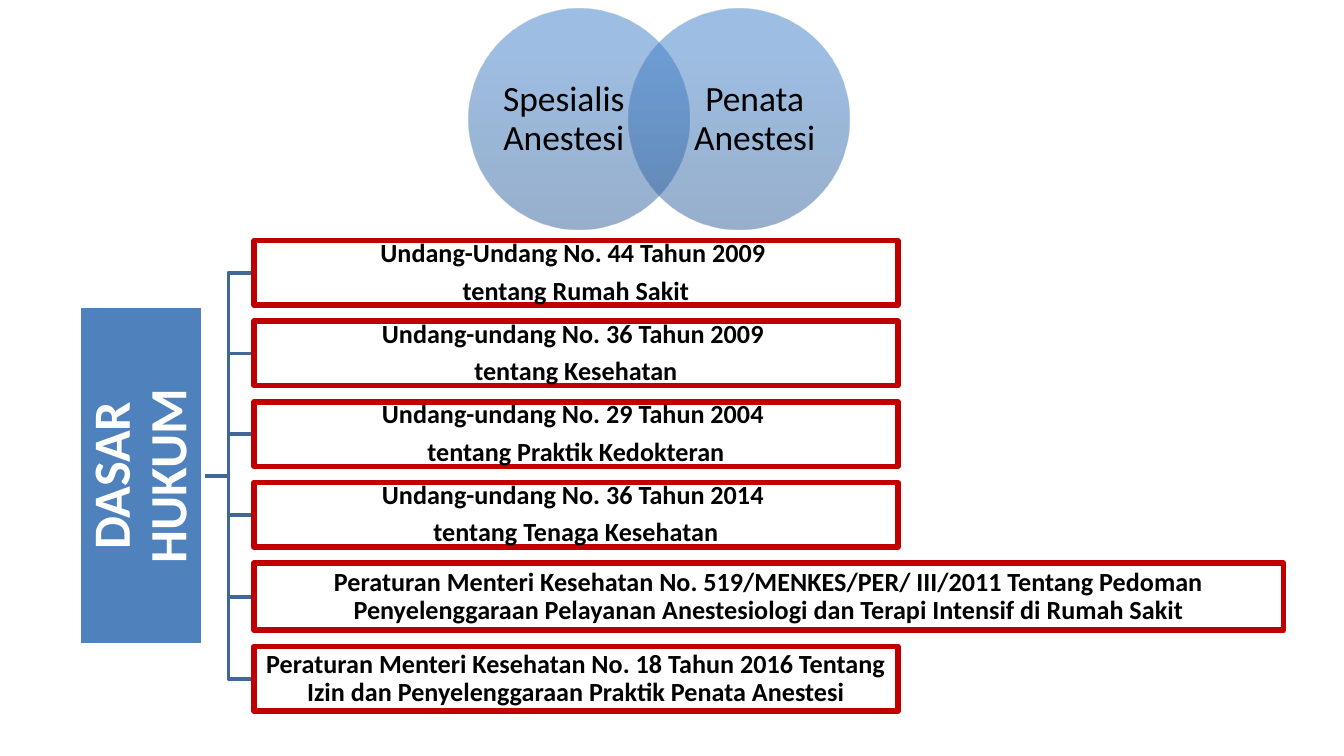
from dataclasses import dataclass

from lxml.etree import SubElement
from pptx import Presentation
from pptx.dml.color import RGBColor
from pptx.enum.shapes import MSO_SHAPE as Preset
from pptx.enum.text import MSO_ANCHOR as Anchor, PP_ALIGN as Align
from pptx.oxml.ns import qn
from pptx.util import Inches, Pt


@dataclass(frozen=True)
class Theme:
    font: str = "Calibri"
    white: str = "FFFFFF"
    black: str = "000000"
    heading: str = "4F81BD"
    branch: str = "3F6797"
    border: str = "C00000"
    gradient: tuple = ((0, "2F5F99"), (80, "3D7CC7"), (100, "3A7CCB"))
    opacity: int = 50
    heading_size: int = 28
    circle_size: int = 19
    law_size: int = 14


THEME = Theme()
COLUMNS, ROWS = 100, 56.25
CIRCLE_TOP, CIRCLE_SIZE = 0.65, 16.4
CIRCLES = [("Spesialis Anestesi", 34.9, 37.2), ("Penata Anestesi", 46.8, 51.4)]
HEADING_CENTER = (10.5, 35.4)
HEADING_LENGTH, HEADING_DEPTH = 25.2, 9.2
LAW_LEFT, LAW_TOP, LAW_GAP = 18.9, 17.9, 1.2
NARROW, WIDE = 47.9, 76.6
LAWS = [
    (["Undang-Undang No. 44 Tahun 2009 ", "tentang Rumah Sakit"], NARROW, 4.8),
    (["Undang-undang No. 36 Tahun 2009 ", "tentang Kesehatan"], NARROW, 4.8),
    (["Undang-undang No. 29 Tahun 2004 ", "tentang Praktik Kedokteran"], NARROW, 4.8),
    (["Undang-undang No. 36 Tahun 2014 ", "tentang Tenaga Kesehatan"], NARROW, 4.8),
    (["Peraturan Menteri Kesehatan No. 519/MENKES/PER/ III/2011 Tentang Pedoman "
      "Penyelenggaraan Pelayanan Anestesiologi dan Terapi Intensif di Rumah Sakit"],
     WIDE, 5),
    (["Peraturan Menteri Kesehatan No. 18 Tahun 2016 Tentang "
      "Izin dan Penyelenggaraan Praktik Penata Anestesi"], NARROW, 4.8),
]


def grid(*cells):
    return [Inches(cell / 10) for cell in cells]


def color(code):
    return RGBColor.from_string(code)


def write_text(shape, lines, size, code, bold=False, inset=0.0):
    frame = shape.text_frame
    frame.word_wrap = True
    frame.vertical_anchor = Anchor.MIDDLE
    frame.margin_left = frame.margin_right = Inches(inset)
    frame.margin_top = frame.margin_bottom = Inches(inset)
    frame.text = "\n".join(lines)
    for paragraph in frame.paragraphs:
        paragraph.alignment = Align.CENTER
        paragraph.line_spacing = 0.9
        paragraph.space_after = Pt(size * 0.35)
        for run in paragraph.runs:
            run.font.name = THEME.font
            run.font.size = Pt(size)
            run.font.bold = bold
            run.font.color.rgb = color(code)


def set_line(shape, code, width):
    shape.shadow.inherit = False
    shape.line.color.rgb = color(code)
    shape.line.width = Pt(width)


def add_branch(slide, law_middle):
    left, middle = HEADING_CENTER[0] + HEADING_DEPTH / 2, HEADING_CENTER[1]
    bend = (left + LAW_LEFT) / 2
    builder = slide.shapes.build_freeform(*grid(left, middle))
    points = [(bend, middle), (bend, law_middle), (LAW_LEFT, law_middle)]
    builder.add_line_segments([grid(*point) for point in points], close=False)
    branch = builder.convert_to_shape()
    branch.fill.background()
    set_line(branch, THEME.branch, 2)


def add_heading(slide):
    left = HEADING_CENTER[0] - HEADING_LENGTH / 2
    top = HEADING_CENTER[1] - HEADING_DEPTH / 2
    heading = slide.shapes.add_shape(
        Preset.RECTANGLE, *grid(left, top, HEADING_LENGTH, HEADING_DEPTH))
    heading.rotation = 270
    heading.fill.solid()
    heading.fill.fore_color.rgb = color(THEME.heading)
    set_line(heading, THEME.white, 2)
    write_text(heading, ["DASAR HUKUM"], THEME.heading_size, THEME.white, True, 0.03)


def add_law(slide, lines, top, width, height):
    box = slide.shapes.add_shape(
        Preset.RECTANGLE, *grid(LAW_LEFT, top, width, height))
    box.fill.background()
    set_line(box, THEME.border, 3)
    write_text(box, lines, THEME.law_size, THEME.black, True, 0.01)


def fill_gradient(shape):
    shape.fill.gradient()
    shape.fill.gradient_angle = 90
    stops = shape.element.spPr.find(qn("a:gradFill")).find(qn("a:gsLst"))
    for stop in list(stops):
        stops.remove(stop)
    for position, code in THEME.gradient:
        stop = SubElement(stops, qn("a:gs"), pos=str(position * 1000))
        shade = SubElement(stop, qn("a:srgbClr"), val=code)
        SubElement(shade, qn("a:alpha"), val=str(THEME.opacity * 1000))


def add_circle(slide, label, left, label_left):
    circle = slide.shapes.add_shape(
        Preset.OVAL, *grid(left, CIRCLE_TOP, CIRCLE_SIZE, CIRCLE_SIZE))
    circle.shadow.inherit = False
    circle.line.fill.background()
    fill_gradient(circle)
    caption = slide.shapes.add_textbox(*grid(label_left, 2.6, 9.5, 12.6))
    write_text(caption, [label], THEME.circle_size, THEME.black)


def main():
    presentation = Presentation()
    presentation.slide_width, presentation.slide_height = grid(COLUMNS, ROWS)
    slide = presentation.slides.add_slide(presentation.slide_layouts[6])
    top = LAW_TOP
    for lines, width, height in LAWS:
        add_branch(slide, top + height / 2)
        add_law(slide, lines, top, width, height)
        top += height + LAW_GAP
    add_heading(slide)
    for label, left, label_left in CIRCLES:
        add_circle(slide, label, left, label_left)
    presentation.save("out.pptx")


if __name__ == "__main__":
    main()
